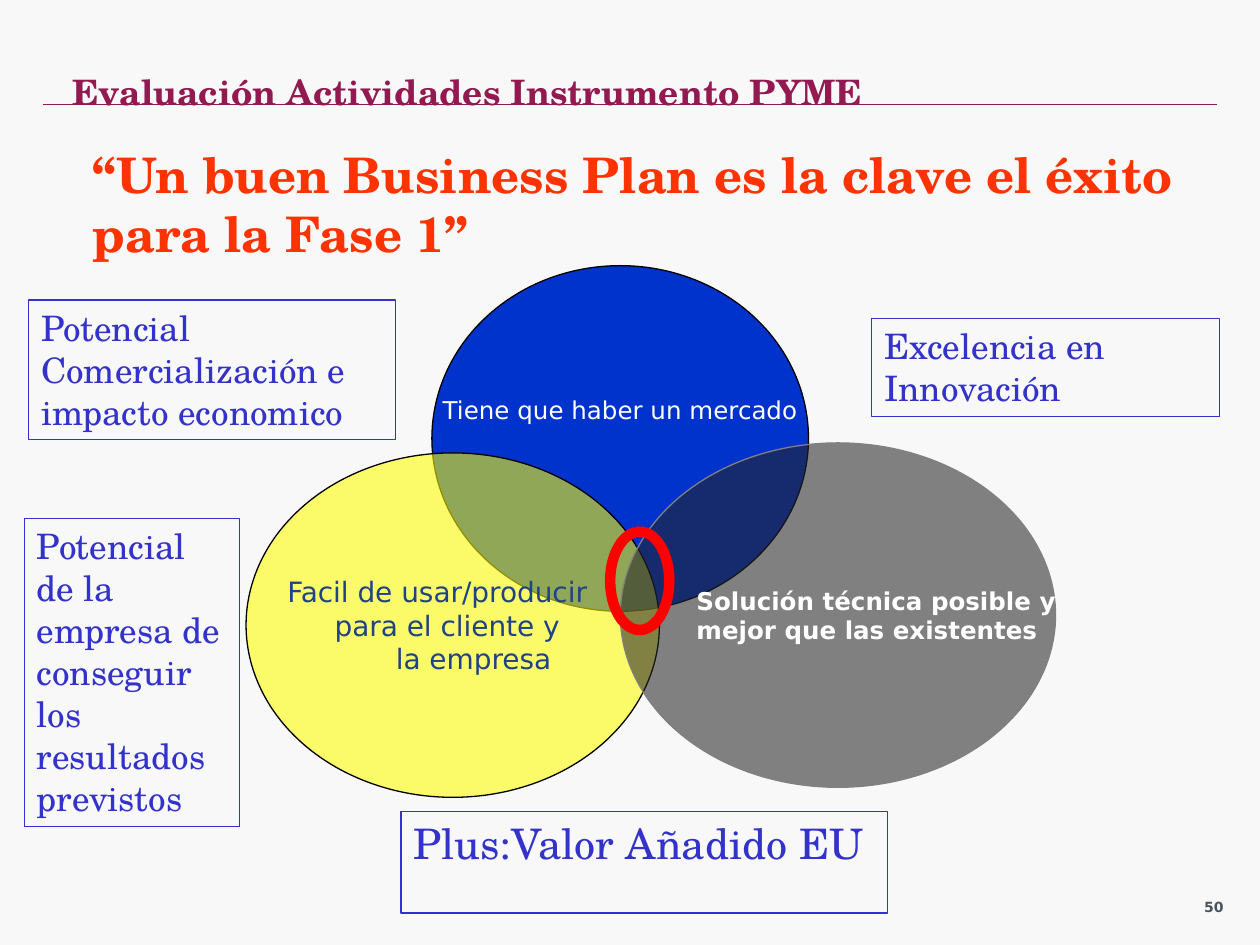
from lxml import etree
from pptx import Presentation
from pptx.dml.color import RGBColor
from pptx.enum import shapes, text
from pptx.oxml import ns
from pptx.util import Pt

BACK = RGBColor(0xF8, 0xF8, 0xF8)
PLUM = RGBColor(0x92, 0x1A, 0x50)
SLATE = RGBColor(0x49, 0x54, 0x5A)
BLUE = RGBColor(0x00, 0x33, 0xCC)
YELLOW = RGBColor(0xFF, 0xFF, 0x00)
DARK = RGBColor(0x26, 0x26, 0x26)
GRAY = RGBColor(0x80, 0x80, 0x80)
NAVY = RGBColor(0x20, 0x43, 0x88)
INDIGO = RGBColor(0x33, 0x33, 0xCC)
ORANGE = RGBColor(0xFF, 0x33, 0x00)
RED = RGBColor(0xFF, 0x00, 0x00)
BLACK = RGBColor(0, 0, 0)
WHITE = RGBColor(0xFF, 0xFF, 0xFF)
SERIF, SANS = "TeX Gyre Schola", "DejaVu Sans"
TOP, MID, LOW = text.MSO_ANCHOR.TOP, text.MSO_ANCHOR.MIDDLE, text.MSO_ANCHOR.BOTTOM
LEFT, CENTER = text.PP_ALIGN.LEFT, text.PP_ALIGN.CENTER


def write(shape, lines, face, size, color, bold=False, anchor=TOP, align=LEFT, wrap=True):
    frame = shape.text_frame
    frame.word_wrap = wrap
    frame.vertical_anchor = anchor
    frame.text = "\n".join(lines)
    for para in frame.paragraphs:
        para.alignment = align
        font = para.font
        font.name, font.size, font.bold = face, Pt(size), bold
        font.color.rgb = color
    return frame


def draw(kind, box, line, width=0.75, fill=None, alpha=None):
    """Add an outlined shape; alpha is the fill's opacity in percent."""
    shape = slide.shapes.add_shape(kind, *map(Pt, box))
    shape.shadow.inherit = False
    shape.line.color.rgb = line
    shape.line.width = Pt(width)
    if fill is None:
        shape.fill.background()
        return shape
    shape.fill.solid()
    shape.fill.fore_color.rgb = fill
    if alpha:
        tint = shape.fill._xPr.find(ns.qn("a:solidFill"))[0]
        etree.SubElement(tint, ns.qn("a:alpha"), val=str(alpha * 1000))
    return shape


prs = Presentation()
prs.slide_width, prs.slide_height = Pt(720), Pt(540)
slide = prs.slides.add_slide(prs.slide_layouts[6])
slide.background.fill.solid()
slide.background.fill.fore_color.rgb = BACK

# Header and page number
rule = slide.shapes.add_connector(
    shapes.MSO_CONNECTOR.STRAIGHT, Pt(24.5), Pt(59.8), Pt(695.5), Pt(59.8))
rule.line.color.rgb = PLUM
rule.line.width = Pt(0.5)
etree.SubElement(rule._element.spPr, ns.qn("a:effectLst"))

page = slide.shapes.add_textbox(Pt(681), Pt(510), Pt(32.5), Pt(24))
write(page, ["50"], SANS, 8, SLATE, bold=True)

title = slide.shapes.add_textbox(Pt(28.8), Pt(0), Pt(667.5), Pt(67.7))
frame = write(title, ["Evaluación Actividades Instrumento PYME"], SERIF, 20, PLUM,
              bold=True, anchor=LOW)
frame.margin_left = Pt(12.4)

# Three overlapping circles and their common core
OVAL = shapes.MSO_SHAPE.OVAL
market = draw(OVAL, (246.8, 151.8, 215.2, 197.5), BLACK, fill=BLUE)
frame = write(market, ["Tiene que haber un mercado"], SANS, 14, WHITE,
              anchor=MID, align=CENTER, wrap=False)
frame.margin_bottom = Pt(36)

ease = draw(OVAL, (140.6, 258.8, 236.2, 196.8), BLACK, fill=YELLOW, alpha=57)
frame = write(ease, ["Facil de usar/producir", "para el cliente y", "la empresa"],
              SANS, 16, NAVY, anchor=MID, wrap=False)
frame.margin_left = Pt(-11)
for para, indent in zip(frame.paragraphs, (0, 27, 62)):
    para._p.get_or_add_pPr().set("marL", str(Pt(indent)))

tech = draw(OVAL, (354.5, 253.1, 248.7, 196.8), GRAY, fill=DARK, alpha=57)
write(tech, ["Solución técnica posible y", "mejor que las existentes"],
      SANS, 14, WHITE, bold=True, anchor=MID, wrap=False)

draw(OVAL, (348.7, 303.8, 33.8, 56.2), RED, width=6)

# Criteria around the circles
for words, size, box in (
    ("Excelencia en Innovación", 20, (498.2, 182, 198.7, 56)),
    ("Potencial Comercialización e impacto economico", 20, (16.4, 171.4, 209.8, 79.8)),
    ("Potencial de la empresa de conseguir los resultados previstos", 20,
     (13.8, 296.2, 123, 176)),
    ("Plus:Valor Añadido EU", 24, (229.1, 463.6, 278.2, 58.2)),
):
    note = draw(shapes.MSO_SHAPE.RECTANGLE, box, INDIGO)
    write(note, [words], SERIF, size, INDIGO)

claim = slide.shapes.add_textbox(Pt(46), Pt(79.2), Pt(638), Pt(74.2))
write(claim, ["“Un buen Business Plan es la clave el éxito para la Fase 1”"],
      SERIF, 28, ORANGE, bold=True)

prs.save("out.pptx")
